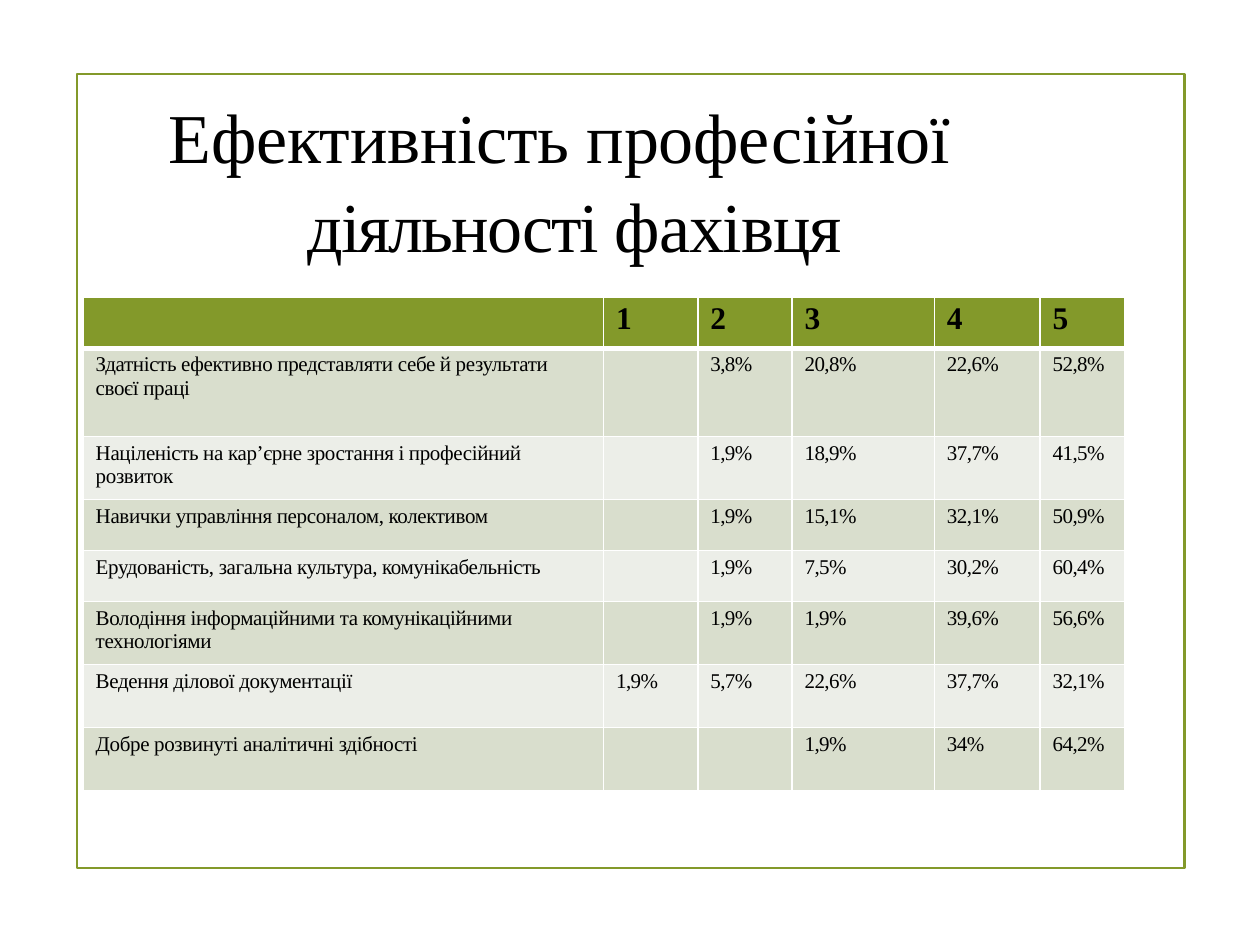
from lxml.etree import SubElement
from pptx import Presentation
from pptx.dml.color import RGBColor
from pptx.enum.shapes import MSO_SHAPE as Shape
from pptx.enum.text import MSO_ANCHOR as Anchor, MSO_AUTO_SIZE as AutoSize, PP_ALIGN as Align
from pptx.oxml.ns import qn
from pptx.util import Cm, Pt

TITLE = [("Ефективність ", -0.3), ("професійної\v", 0.1),
         ("діяльності ", -1.1), ("фахівця", -0.6)]
HEADER = ["", "1", "2", "3", "4", "5"]
RATINGS = [
    ["Здатність ефективно представляти себе й результати\nсвоєї праці",
     "", "3,8%", "20,8%", "22,6%", "52,8%"],
    ["Націленість на кар’єрне зростання і професійний\vрозвиток",
     "", "1,9%", "18,9%", "37,7%", "41,5%"],
    ["Навички управління персоналом, колективом",
     "", "1,9%", "15,1%", "32,1%", "50,9%"],
    ["Ерудованість, загальна культура, комунікабельність",
     "", "1,9%", "7,5%", "30,2%", "60,4%"],
    ["Володіння інформаційними та комунікаційними технологіями",
     "", "1,9%", "1,9%", "39,6%", "56,6%"],
    ["Ведення ділової документації",
     "1,9%", "5,7%", "22,6%", "37,7%", "32,1%"],
    ["Добре розвинуті аналітичні здібності",
     "", "", "1,9%", "34%", "64,2%"],
]
COLUMN_WIDTHS = [10.49, 1.9, 1.9, 2.87, 2.13, 1.7]
ROW_HEIGHTS = [1.03, 1.78, 1.27, 1.03, 1.03, 1.27, 1.27, 1.27]


def color(code):
    return RGBColor.from_string(code)


class SlideBuilder:
    font = "Times New Roman"
    ink = "000000"
    green = "83992A"
    rule = "FFFFFF"
    bands = ["D9DECD", "ECEEE8"]

    def __init__(self, page):
        self.page = page

    def style(self, span, size, bold=False, spacing=0):
        span.font.name = self.font
        span.font.size = Pt(size)
        span.font.bold = bold
        span.font.color.rgb = color(self.ink)
        span._r.get_or_add_rPr().set("spc", str(round(spacing * 100)))

    def frame(self, left, top, width, height):
        box = self.page.shapes.add_shape(
            Shape.RECTANGLE, Cm(left), Cm(top), Cm(width), Cm(height))
        box.shadow.inherit = False
        box.fill.background()
        box.line.color.rgb = color(self.green)
        box.line.width = Pt(1.25)

    def title(self, parts, left, top, width, height):
        box = self.page.shapes.title
        box.left, box.top, box.width, box.height = map(Cm, (left, top, width, height))
        frame = box.text_frame
        frame.auto_size = AutoSize.NONE
        frame.word_wrap = True
        frame.vertical_anchor = Anchor.TOP
        frame.margin_left = frame.margin_right = frame.margin_bottom = 0
        frame.margin_top = Cm(0.13)
        para = frame.paragraphs[0]
        para.text = "".join(text.replace("\v", "") + "\v" * text.count("\v")
                            for text, _ in parts[:2])
        for text, _ in parts[2:]:
            para.add_run().text = text
        # The first line is one span; the second line hangs to the right
        spacings = [-0.1] + [spacing for _, spacing in parts[2:]]
        for span, spacing in zip(para.runs, spacings):
            self.style(span, 40, spacing=spacing)
        para.alignment = Align.LEFT
        para.line_spacing = 1.05
        indent = Cm(2.8)
        properties = para._p.get_or_add_pPr()
        properties.set("marL", str(indent))
        properties.set("indent", str(-indent))

    def borders(self, cell, top, bottom):
        properties = cell._tc.get_or_add_tcPr()
        for side, width in (("L", 1), ("R", 1), ("T", top), ("B", bottom)):
            line = SubElement(properties, qn(f"a:ln{side}"), w=str(Pt(width)))
            fill = SubElement(line, qn("a:solidFill"))
            SubElement(fill, qn("a:srgbClr"), val=self.rule)

    def cell(self, cell, text, row):
        header = row == 0
        cell.margin_left = Cm(0.25)
        cell.margin_right = cell.margin_bottom = 0
        cell.margin_top = Cm(0.08 if header else 0.1)
        self.borders(cell, 3 if row == 1 else 1, 3 if header else 1)
        cell.fill.solid()
        cell.fill.fore_color.rgb = color(self.green if header else self.bands[(row - 1) % 2])
        cell.text_frame.text = text
        for para in cell.text_frame.paragraphs:
            for span in para.runs:
                if header:
                    self.style(span, 18, bold=True)
                else:
                    self.style(span, 12, spacing=-0.3 if "%" in text else -0.2)

    def table(self, rows, left, top, widths, heights):
        table = self.page.shapes.add_table(
            len(rows), len(widths), Cm(left), Cm(top),
            Cm(sum(widths)), Cm(sum(heights))).table
        for column, width in zip(table.columns, widths):
            column.width = Cm(width)
        for index, (texts, height) in enumerate(zip(rows, heights)):
            table.rows[index].height = Cm(height)
            for position, text in enumerate(texts):
                self.cell(table.cell(index, position), text, index)


def main():
    deck = Presentation()
    deck.slide_width, deck.slide_height = Cm(25.4), Cm(19.05)
    builder = SlideBuilder(deck.slides.add_slide(deck.slide_layouts[5]))

    # Green outline around the content
    builder.frame(1.55, 1.5, 22.33, 16)
    # Heading
    builder.title(TITLE, 3.4, 1.68, 16, 3.45)
    # Shares of answers for each rating from 1 to 5
    builder.table([HEADER] + RATINGS, 1.68, 5.99, COLUMN_WIDTHS, ROW_HEIGHTS)

    deck.save("out.pptx")


if __name__ == "__main__":
    main()
